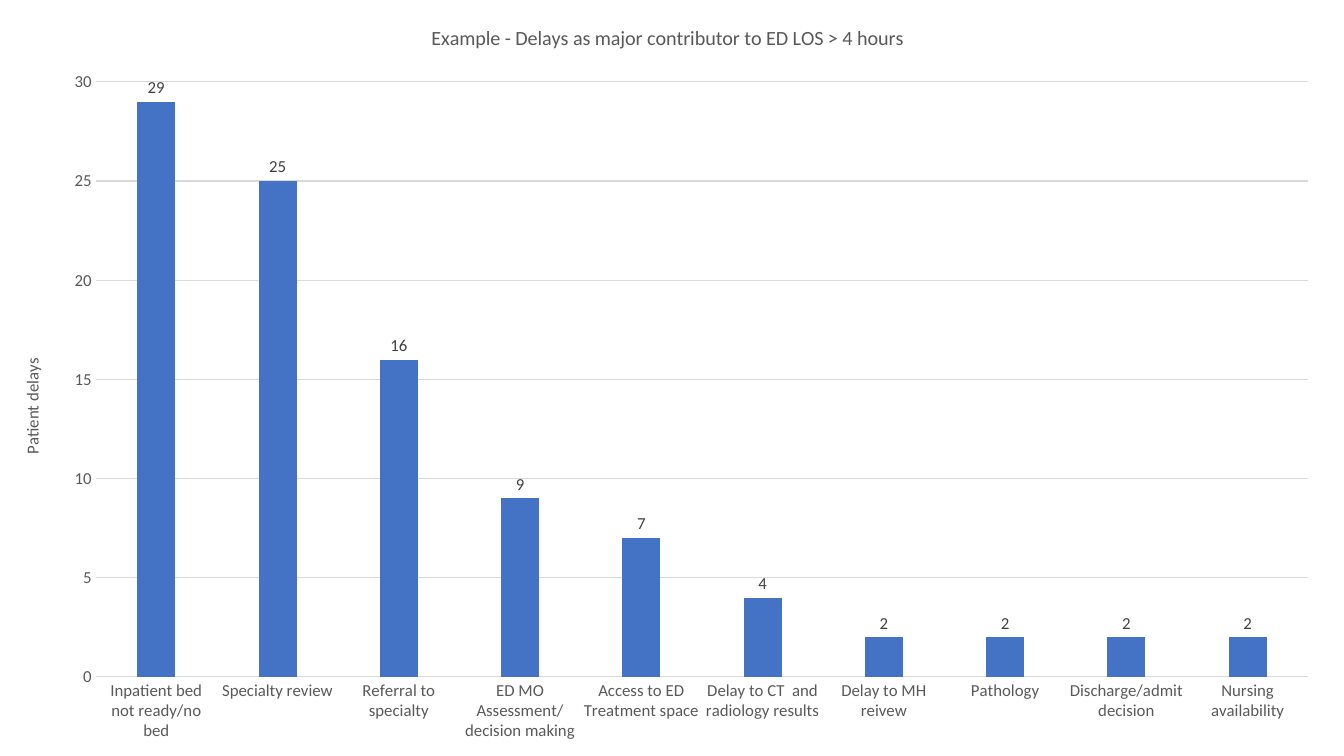
"""Build a slide with a column chart of the delays behind long ED stays."""
from dataclasses import dataclass

import pptx
import pptx.chart.axis
import pptx.chart.chart
import pptx.chart.data
import pptx.dml.color
import pptx.dml.line
import pptx.enum.chart
import pptx.text.text
import pptx.util
from pptx.util import Inches


@dataclass(frozen=True)
class Theme:
    font: str = "Calibri"
    title_size: float = 14.4
    body_size: float = 12
    text: str = "595959"
    label: str = "404040"
    bar: str = "4472C4"
    rule: str = "D9D9D9"
    rule_width: float = 0.75


@dataclass(frozen=True)
class Delay:
    cause: str
    patients: int


THEME = Theme()
DELAYS = [
    Delay("Inpatient bed not ready/no bed", 29),
    Delay("Specialty review", 25),
    Delay("Referral to specialty", 16),
    Delay("ED MO Assessment/ decision making", 9),
    Delay("Access to ED Treatment space", 7),
    Delay("Delay to CT  and radiology results", 4),
    Delay("Delay to MH reivew", 2),
    Delay("Pathology", 2),
    Delay("Discharge/admit decision", 2),
    Delay("Nursing availability", 2),
]


def rgb(value: str) -> pptx.dml.color.RGBColor:
    return pptx.dml.color.RGBColor.from_string(value)


def format_font(font: pptx.text.text.Font, size: float = THEME.body_size,
                color: str = THEME.text) -> None:
    font.name = THEME.font
    font.size = pptx.util.Pt(size)
    font.bold = False
    font.color.rgb = rgb(color)


def write_text(tf: pptx.text.text.TextFrame, text: str, *,
               size: float = THEME.body_size, color: str = THEME.text) -> None:
    r = tf.paragraphs[0].add_run()
    r.text = text
    format_font(r.font, size, color)


def format_rule(line: pptx.dml.line.LineFormat) -> None:
    line.color.rgb = rgb(THEME.rule)
    line.width = pptx.util.Pt(THEME.rule_width)


def format_axes(chart: pptx.chart.chart.Chart) -> None:
    cat_axis, val_axis = chart.category_axis, chart.value_axis
    for axis in (cat_axis, val_axis):
        axis.major_tick_mark = pptx.enum.chart.XL_TICK_MARK.NONE
        axis.minor_tick_mark = pptx.enum.chart.XL_TICK_MARK.NONE
        format_font(axis.tick_labels.font)
    cat_axis.has_major_gridlines = False
    format_rule(cat_axis.format.line)
    val_axis.minimum_scale = 0
    val_axis.maximum_scale = 30
    val_axis.major_unit = 5
    val_axis.format.line.fill.background()
    format_rule(val_axis.major_gridlines.format.line)
    write_text(val_axis.axis_title.text_frame, "Patient delays")


def format_bars(chart: pptx.chart.chart.Chart) -> None:
    plot = chart.plots[0]
    plot.gap_width = 219
    plot.overlap = -27
    plot.vary_by_categories = False
    series = plot.series[0]
    series.invert_if_negative = False
    series.format.fill.solid()
    series.format.fill.fore_color.rgb = rgb(THEME.bar)
    labels = series.data_labels
    labels.show_value = True
    labels.position = pptx.enum.chart.XL_LABEL_POSITION.OUTSIDE_END
    format_font(labels.font, color=THEME.label)


def main() -> None:
    prs = pptx.Presentation()
    prs.slide_width, prs.slide_height = Inches(13.33), Inches(7.5)
    s = prs.slides.add_slide(prs.slide_layouts[6])

    data = pptx.chart.data.CategoryChartData()
    data.categories = [delay.cause for delay in DELAYS]
    data.add_series("Series 1", [delay.patients for delay in DELAYS])
    chart = s.shapes.add_chart(
        pptx.enum.chart.XL_CHART_TYPE.COLUMN_CLUSTERED,
        Inches(0), Inches(0), Inches(13.24), Inches(7.5), data).chart

    format_font(chart.font)
    chart.has_legend = False
    chart.has_title = True
    chart.chart_title.include_in_layout = False
    write_text(chart.chart_title.text_frame,
               "Example - Delays as major contributor to ED LOS > 4 hours",
               size=THEME.title_size)
    format_axes(chart)
    format_bars(chart)
    prs.save("out.pptx")


if __name__ == "__main__":
    main()
